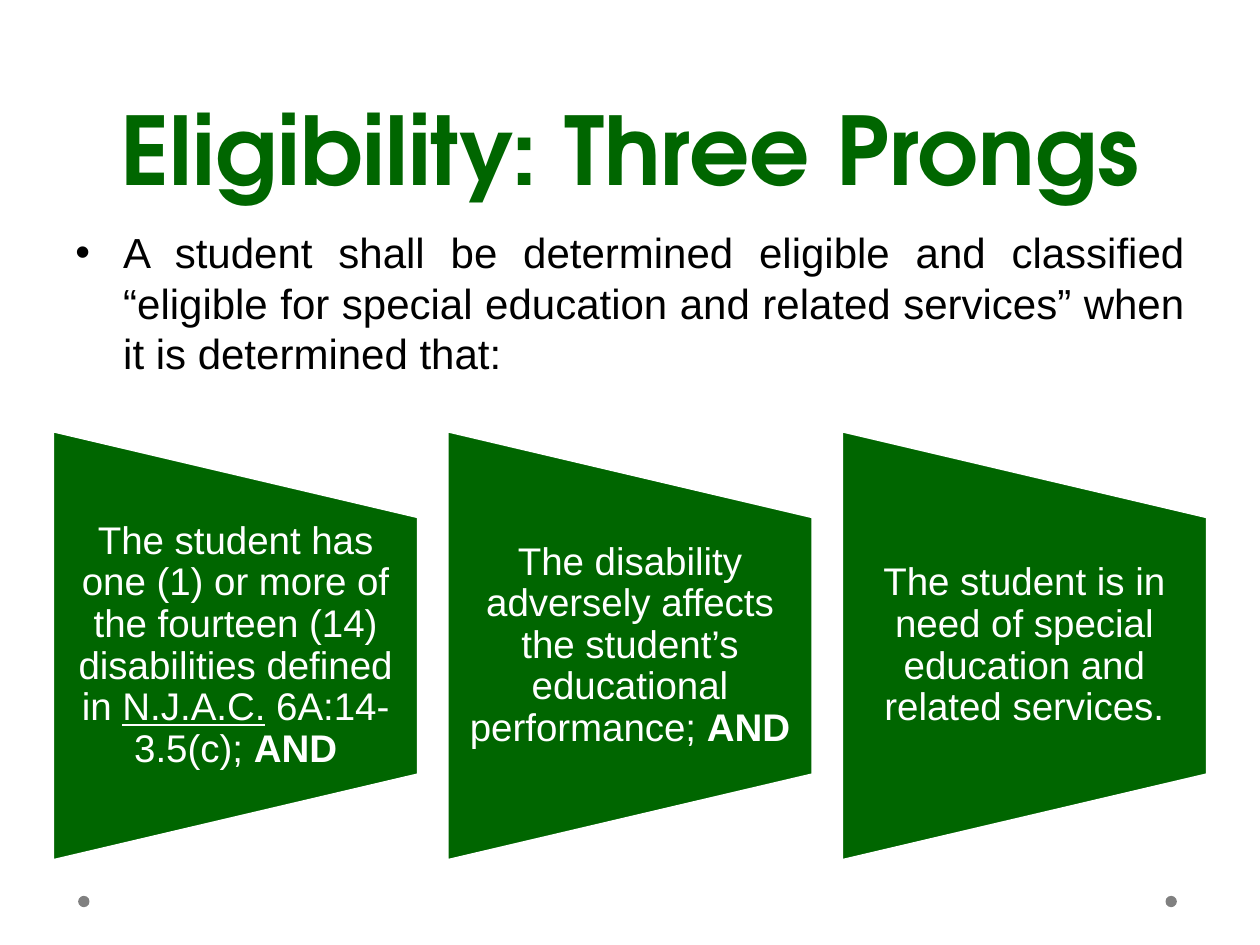
from dataclasses import dataclass

from lxml.etree import SubElement
from pptx import Presentation
from pptx.dml.color import RGBColor
from pptx.enum.shapes import MSO_SHAPE
from pptx.enum.text import MSO_ANCHOR, PP_ALIGN
from pptx.oxml.ns import qn
from pptx.util import Inches, Pt


@dataclass(frozen=True)
class Theme:
    green: RGBColor = RGBColor(0x00, 0x66, 0x00)
    white: RGBColor = RGBColor(0xFF, 0xFF, 0xFF)
    black: RGBColor = RGBColor(0x00, 0x00, 0x00)
    gray: RGBColor = RGBColor(0x80, 0x80, 0x80)
    title_font: str = "TeX Gyre Adventor"
    body_font: str = "Arial"
    title_size: int = 54
    body_size: int = 24
    prong_size: int = 22


class SlideBuilder:
    """Draws the elements of one slide in a shared theme."""

    def __init__(self, slide, theme):
        self.slide = slide
        self.theme = theme

    def text_box(self, left, top, width, height, anchor, side_margins=None):
        box = self.slide.shapes.add_textbox(
            Inches(left), Inches(top), Inches(width), Inches(height))
        frame = box.text_frame
        frame.word_wrap = True
        frame.vertical_anchor = anchor
        if side_margins:
            frame.margin_left, frame.margin_right = map(Inches, side_margins)
            frame.margin_top = frame.margin_bottom = 0
        return frame.paragraphs[0]

    def style(self, paragraph, alignment, name, size, color):
        paragraph.alignment = alignment
        paragraph.font.name = name
        paragraph.font.size = Pt(size)
        paragraph.font.color.rgb = color

    def solid(self, kind, left, top, width, height, color):
        shape = self.slide.shapes.add_shape(
            kind, Inches(left), Inches(top), Inches(width), Inches(height))
        shape.shadow.inherit = False
        shape.fill.solid()
        shape.fill.fore_color.rgb = color
        shape.line.fill.background()
        return shape

    def dot(self, left):
        self.solid(MSO_SHAPE.OVAL, left, 7.11, 0.09, 0.09, self.theme.gray)

    def title(self, text):
        paragraph = self.text_box(0.5, 0.25, 9, 1.42, MSO_ANCHOR.BOTTOM)
        paragraph.text = text
        paragraph.line_spacing = Pt(58)
        self.style(paragraph, PP_ALIGN.CENTER, self.theme.title_font,
                   self.theme.title_size, self.theme.green)
        paragraph.font.bold = True

    def bullet(self, text):
        paragraph = self.text_box(0.5, 1.75, 9, 1.25, MSO_ANCHOR.TOP)
        paragraph.text = text
        properties = paragraph._p.get_or_add_pPr()
        properties.set("marL", str(Inches(0.38)))
        properties.set("indent", str(Inches(-0.38)))
        SubElement(properties, qn("a:buFont"), typeface=self.theme.body_font)
        SubElement(properties, qn("a:buChar"), char="•")
        self.style(paragraph, PP_ALIGN.JUSTIFY, self.theme.body_font,
                   self.theme.body_size, self.theme.black)

    def prong(self, left, runs):
        shape = self.solid(MSO_SHAPE.FLOWCHART_MANUAL_OPERATION,
                           left, 3.67, 3.42, 2.91, self.theme.green)
        shape.rotation = 270
        shape.line.color.rgb = self.theme.white
        shape.line.width = Pt(2.25)
        paragraph = self.text_box(left + 0.26, 4.1, 2.91, 2.05,
                                  MSO_ANCHOR.MIDDLE, (0.15, 0.16))
        paragraph.line_spacing = 0.9
        self.style(paragraph, PP_ALIGN.CENTER, self.theme.body_font,
                   self.theme.prong_size, self.theme.white)
        for text, emphasis in runs:
            run = paragraph.add_run()
            run.text = text
            if emphasis:
                setattr(run.font, emphasis, True)


PRONGS = [
    [("The student has one (1) or more of the fourteen (14) disabilities defined in ", None),
     ("N.J.A.C.", "underline"), (" 6A:14-3.5(c); ", None), ("AND", "bold")],
    [("The disability adversely affects the student’s educational performance; ", None),
     ("AND", "bold")],
    [("The student is in need of special education and related services.", None)],
]


def main():
    presentation = Presentation()
    presentation.slide_width = Inches(10)
    presentation.slide_height = Inches(7.5)
    slide = presentation.slides.add_slide(presentation.slide_layouts[6])
    builder = SlideBuilder(slide, Theme())
    for left in (9.25, 0.62):
        builder.dot(left)
    builder.title("Eligibility: Three Prongs")
    builder.bullet("A student shall be determined eligible and classified “eligible for "
                   "special education and related services” when it is determined that:")
    for index, runs in enumerate(PRONGS):
        builder.prong(0.16 + 3.13 * index, runs)
    presentation.save("out.pptx")


if __name__ == "__main__":
    main()
